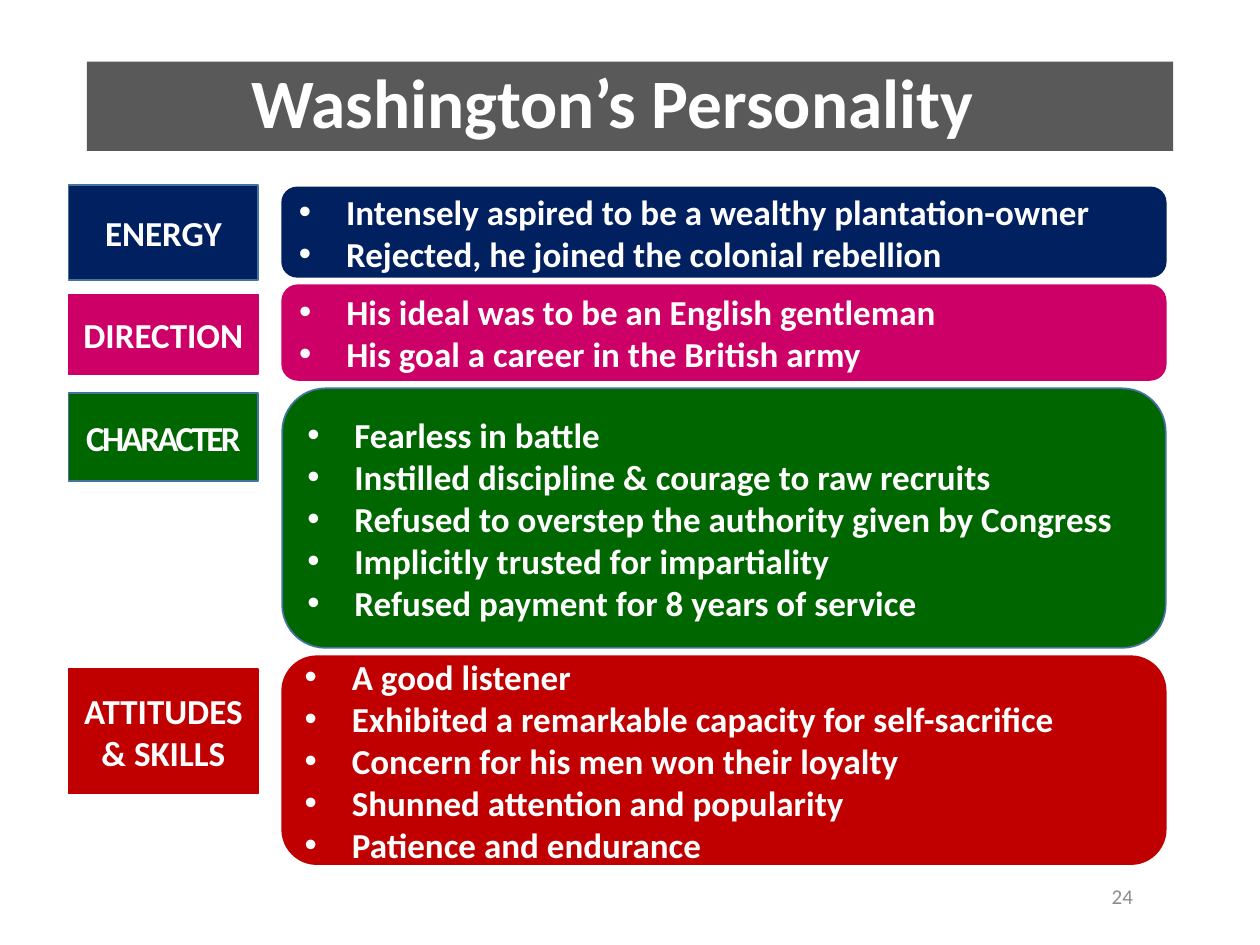
from pptx import Presentation
from pptx.dml.color import RGBColor
from pptx.enum.shapes import MSO_SHAPE
from pptx.enum.text import MSO_ANCHOR, MSO_AUTO_SIZE, PP_ALIGN
from pptx.oxml.ns import qn
from pptx.util import Cm, Pt
from lxml import etree

WHITE = RGBColor(0xFF, 0xFF, 0xFF)
GREY = RGBColor(0x59, 0x59, 0x59)
LIGHT_GREY = RGBColor(0x8C, 0x8C, 0x8C)
NAVY = RGBColor(0x00, 0x20, 0x60)
PINK = RGBColor(0xCC, 0x00, 0x66)
GREEN = RGBColor(0x00, 0x66, 0x00)
RED = RGBColor(0xC0, 0x00, 0x00)
STEEL = RGBColor(0x43, 0x73, 0x9E)
FONT = "Calibri"

# Content: one entry per trait; label and panel sizes in centimetres
TITLE = "Washington’s Personality"
PAGE_NUMBER = "24"
TRAITS = [
    {"label": "ENERGY", "fill": NAVY, "label_line": STEEL, "panel_line": NAVY,
     "label_top": 3.73, "label_height": 1.91, "panel_height": 1.8,
     "points": ["Intensely aspired to be a wealthy plantation-owner",
                "Rejected, he joined the colonial rebellion"]},
    {"label": "DIRECTION", "fill": PINK, "label_line": PINK, "panel_line": PINK,
     "label_top": 5.94, "label_height": 1.6, "panel_height": 1.91,
     "points": ["His ideal was to be an English gentleman",
                "His goal a career in the British army"]},
    {"label": "CHARACTER", "fill": GREEN, "label_line": STEEL, "panel_line": STEEL,
     "label_top": 7.92, "label_height": 1.78, "panel_height": 5.23,
     "letter_spacing": -1.5,
     "points": ["Fearless in battle",
                "Instilled discipline & courage to raw recruits",
                "Refused to overstep the authority given by Congress",
                "Implicitly trusted for impartiality",
                "Refused payment for 8 years of service"]},
    {"label": "ATTITUDES & SKILLS", "fill": RED, "label_line": RED, "panel_line": RED,
     "label_top": 13.49, "label_height": 2.51, "panel_height": 4.19,
     "points": ["A good listener",
                "Exhibited a remarkable capacity for self-sacrifice",
                "Concern for his men won their loyalty",
                "Shunned attention and popularity",
                "Patience and endurance"]},
]

# Layout in centimetres
LABEL_LEFT, LABEL_WIDTH = 1.38, 3.83
PANEL_LEFT, PANEL_WIDTH = 5.69, 17.81
PANEL_TOP, PANEL_GAP = 3.78, 0.17
BULLET_INDENT = Cm(0.95)


def style_font(font, size, color, bold=True):
    font.name = FONT
    font.size = Pt(size)
    font.bold = bold
    font.color.rgb = color


def add_bullet(paragraph):
    properties = paragraph._p.get_or_add_pPr()
    properties.set("marL", str(BULLET_INDENT))
    properties.set("indent", str(-BULLET_INDENT))
    etree.SubElement(properties, qn("a:buFont")).set("typeface", "Arial")
    etree.SubElement(properties, qn("a:buChar")).set("char", "•")


def add_box(slide, kind, box, fill, line, lines, alignment, bulleted=False):
    shape = slide.shapes.add_shape(kind, *(Cm(length) for length in box))
    shape.shadow.inherit = False
    shape.fill.solid()
    shape.fill.fore_color.rgb = fill
    shape.line.color.rgb = line
    shape.line.width = Pt(1)
    frame = shape.text_frame
    frame.word_wrap = True
    frame.vertical_anchor = MSO_ANCHOR.MIDDLE
    frame.text = "\n".join(lines)
    for paragraph in frame.paragraphs:
        paragraph.alignment = alignment
        if bulleted:
            add_bullet(paragraph)
        style_font(paragraph.font, 20, WHITE)
    return shape


presentation = Presentation()
presentation.slide_width, presentation.slide_height = Cm(25.4), Cm(19.05)
slide = presentation.slides.add_slide(presentation.slide_layouts[5])

# Title bar, its text centred slightly left of the middle
title = slide.shapes.title
title.left, title.top, title.width, title.height = Cm(1.75), Cm(1.24), Cm(21.9), Cm(1.8)
title.fill.solid()
title.fill.fore_color.rgb = GREY
frame = title.text_frame
frame.text = TITLE
frame.auto_size = MSO_AUTO_SIZE.NONE
frame.vertical_anchor = MSO_ANCHOR.MIDDLE
frame.margin_right = Cm(0.95)
paragraph = frame.paragraphs[0]
paragraph.alignment = PP_ALIGN.CENTER
paragraph.line_spacing = 0.9
style_font(paragraph.font, 39.6, WHITE)

# Panels stacked with equal gaps, each with its label
panel_top = PANEL_TOP
for trait in TRAITS:
    add_box(slide, MSO_SHAPE.ROUNDED_RECTANGLE,
            (PANEL_LEFT, panel_top, PANEL_WIDTH, trait["panel_height"]),
            trait["fill"], trait["panel_line"], trait["points"], PP_ALIGN.LEFT, bulleted=True)
    panel_top += trait["panel_height"] + PANEL_GAP
    label = add_box(slide, MSO_SHAPE.RECTANGLE,
                    (LABEL_LEFT, trait["label_top"], LABEL_WIDTH, trait["label_height"]),
                    trait["fill"], trait["label_line"], [trait["label"]], PP_ALIGN.CENTER)
    if "letter_spacing" in trait:
        run = label.text_frame.paragraphs[0].runs[0]
        run._r.get_or_add_rPr().set("spc", str(int(trait["letter_spacing"] * 100)))

# Page number
number_box = slide.shapes.add_textbox(Cm(17.17), Cm(17.55), Cm(5.92), Cm(1.02))
frame = number_box.text_frame
frame.word_wrap = True
frame.vertical_anchor = MSO_ANCHOR.MIDDLE
frame.text = PAGE_NUMBER
frame.paragraphs[0].alignment = PP_ALIGN.RIGHT
style_font(frame.paragraphs[0].font, 12, LIGHT_GREY, bold=False)

presentation.save("out.pptx")
